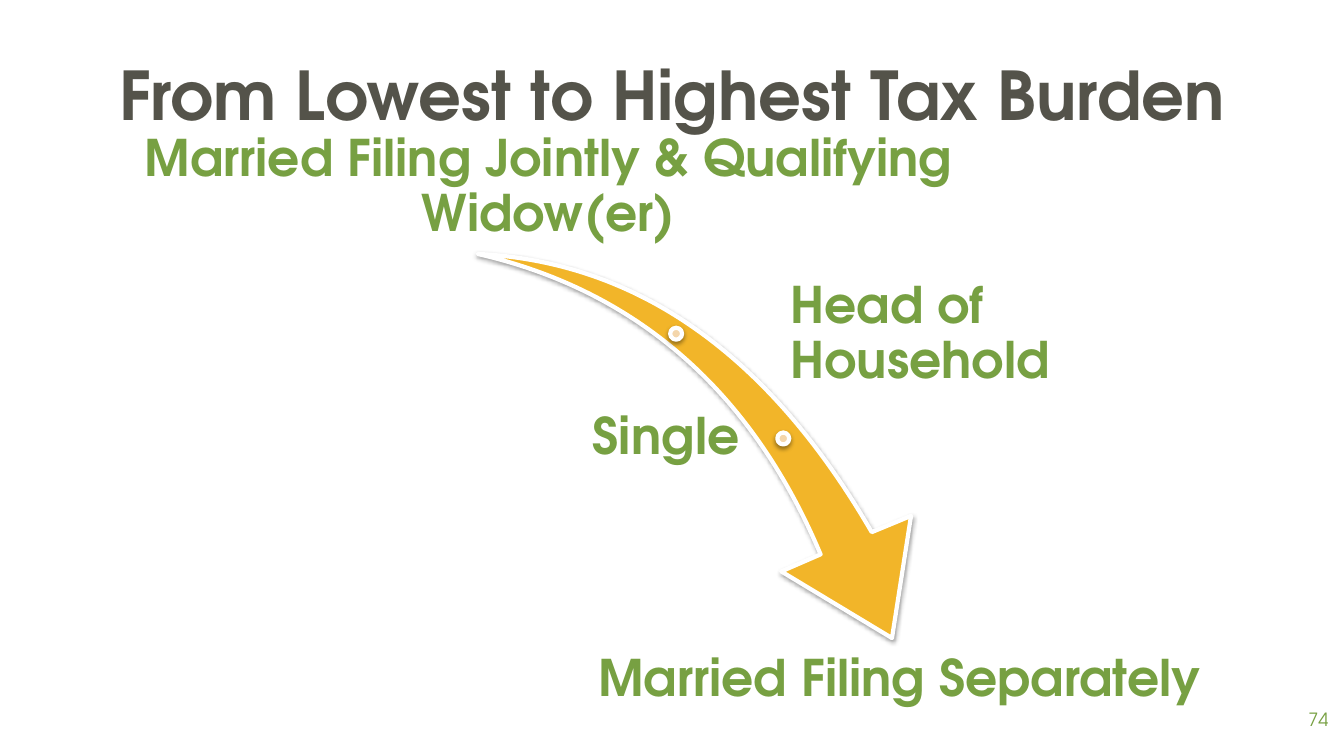
from lxml import etree
from pptx import Presentation
from pptx import util as u
from pptx.dml.color import RGBColor
from pptx.enum import shapes, text
from pptx.oxml.ns import qn

THEME = {
    "font": "TeX Gyre Adventor",
    "heading": "54534A",
    "label": "77A042",
    "arrow": "F2B529",
    "dot": "F4D6AB",
    "edge": "FFFFFF",
    "shadow": "000000",
    "heading_size": 48,
    "label_size": 36,
    "number_size": 13,
    "edge_width": 3,
}

TITLE = ("From Lowest to Highest Tax Burden", (1.7, 0.76, 30.48, 3.18), "CENTER", "MIDDLE")
STATUSES = [
    ("Married Filing Jointly & Qualifying Widow(er)", (0.91, 3.94, 25.83, 2.29), "CENTER", "BOTTOM"),
    ("Head of Household", (19.79, 7.29, 10.52, 2.29), "LEFT", "MIDDLE"),
    ("Single", (10.95, 9.91, 7.82, 2.29), "RIGHT", "MIDDLE"),
    ("Married Filing Separately", (12.4, 16.33, 20.55, 1.35), "CENTER", "TOP"),
]
NUMBER = ("74", (31.7, 17.6, 2.03, 1.45), "RIGHT", "TOP")

ARROW_TAIL = (12.04, 6.4)
ARROW_OUTER = [(16.08, 6.6), (19.38, 8.94), (21.97, 13.41)]
ARROW_HEAD = [(22.96, 13.0), (22.48, 16.08), (19.69, 14.4), (20.68, 13.97)]
ARROW_INNER = [(18.95, 9.86), (16.05, 7.32), ARROW_TAIL]
DOT_CENTRES = [(17.04, 8.41), (19.74, 11.05)]
DOT_SIZE = 0.3


def colour(name):
    return RGBColor.from_string(THEME[name])


def add_text(slide, entry, size, ink, bold=True, spacing=None, inset=(0.13, 0.13)):
    wording, place, align, anchor = entry
    box = slide.shapes.add_textbox(*map(u.Cm, place))
    frame = box.text_frame
    frame.word_wrap = True
    frame.vertical_anchor = text.MSO_ANCHOR[anchor]
    frame.margin_left = frame.margin_right = u.Cm(inset[0])
    frame.margin_top = frame.margin_bottom = u.Cm(inset[1])
    paragraph = frame.paragraphs[0]
    paragraph.alignment = text.PP_ALIGN[align]
    paragraph.line_spacing = spacing
    run = paragraph.add_run()
    run.text = wording
    run.font.name = THEME["font"]
    run.font.size = u.Pt(THEME[size])
    run.font.bold = bold
    run.font.color.rgb = colour(ink)


def paint(part, fill):
    part.fill.solid()
    part.fill.fore_color.rgb = colour(fill)
    part.line.color.rgb = colour("edge")
    part.line.width = u.Pt(THEME["edge_width"])
    part.shadow.inherit = False
    effects = part._element.spPr.find(qn("a:effectLst"))
    shadow = etree.SubElement(
        effects, qn("a:outerShdw"), blurRad=str(u.Pt(3.1)), dist=str(u.Pt(1.6)),
        dir="5400000", rotWithShape="0")
    tint = etree.SubElement(shadow, qn("a:srgbClr"), val=THEME["shadow"])
    etree.SubElement(tint, qn("a:alpha"), val="38000")


def bend(segments):
    curve = etree.Element(qn("a:cubicBezTo"))
    segments[0].addprevious(curve)
    for segment in segments:
        curve.append(segment[0])
        segment.getparent().remove(segment)


def add_arrow(slide):
    outline = ARROW_OUTER + ARROW_HEAD + ARROW_INNER
    builder = slide.shapes.build_freeform(*map(u.Cm, ARROW_TAIL), scale=1.0)
    builder.add_line_segments([(u.Cm(x), u.Cm(y)) for x, y in outline], close=True)
    arrow = builder.convert_to_shape()
    segments = list(arrow._element.iter(qn("a:lnTo")))
    inner_start = len(ARROW_OUTER + ARROW_HEAD)
    bend(segments[:len(ARROW_OUTER)])
    bend(segments[inner_start:len(outline)])
    paint(arrow, "arrow")


def main():
    deck = Presentation()
    deck.slide_width, deck.slide_height = u.Cm(33.87), u.Cm(19.05)
    slide = deck.slides.add_slide(deck.slide_layouts[6])

    add_text(slide, TITLE, "heading_size", "heading", inset=(0.25, 0.13))
    add_arrow(slide)
    for x, y in DOT_CENTRES:
        corner = (x - DOT_SIZE / 2, y - DOT_SIZE / 2)
        dot = slide.shapes.add_shape(
            shapes.MSO_SHAPE.OVAL, *map(u.Cm, (*corner, DOT_SIZE, DOT_SIZE)))
        paint(dot, "dot")
    for status in STATUSES:
        add_text(slide, status, "label_size", "label", spacing=0.9)
    add_text(slide, NUMBER, "number_size", "label", bold=False, inset=(0.25, 0.25))

    deck.save("out.pptx")


if __name__ == "__main__":
    main()
